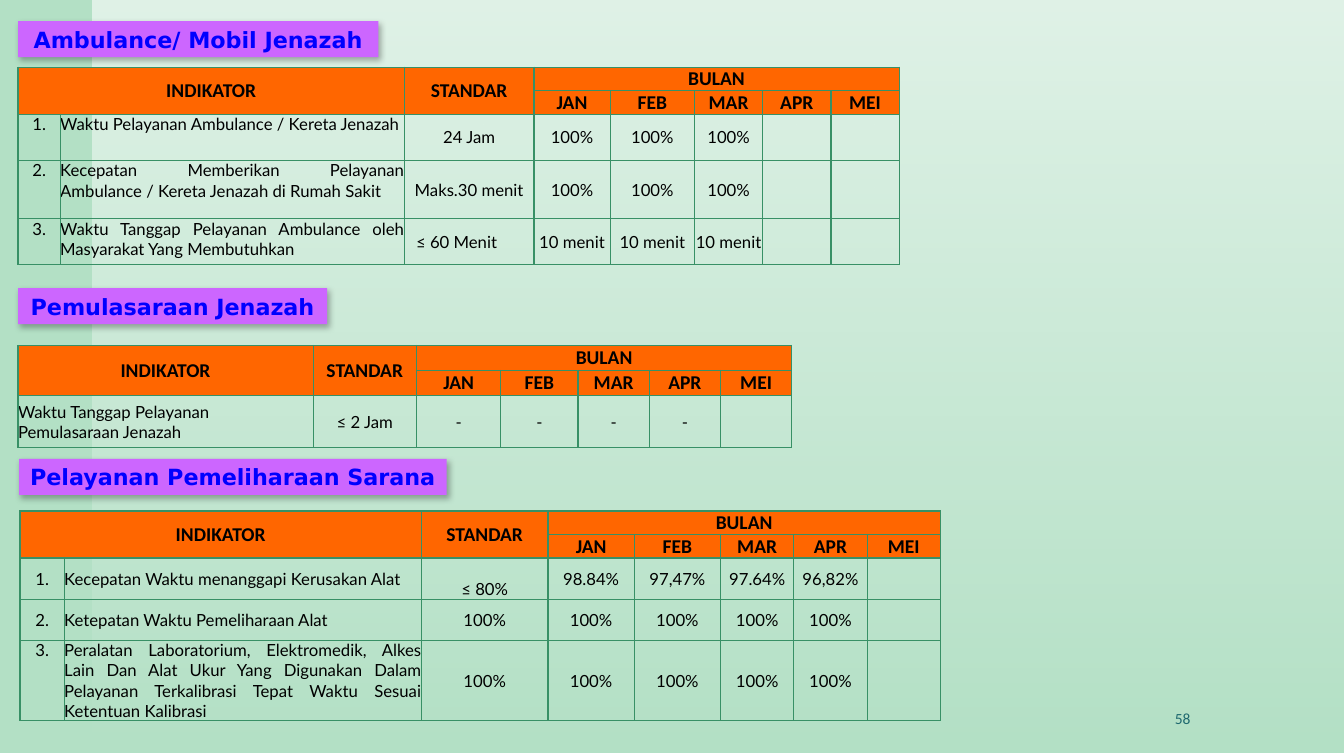
from lxml.etree import SubElement
from pptx import Presentation
from pptx.dml.color import RGBColor
from pptx.enum.shapes import MSO_SHAPE
from pptx.enum.text import MSO_ANCHOR, MSO_AUTO_SIZE, PP_ALIGN
from pptx.oxml import parse_xml
from pptx.oxml.ns import nsdecls, qn
from pptx.util import Inches, Pt

COLORS = {
    "page": "B3E0C5", "veil": "FFFFFF", "heading": "CC66FF", "heading_text": "0000FF",
    "header": "FF6600", "border": "389066", "text": "000000", "number": "1F696F",
}
MONTHS = ["JAN", "FEB", "MAR", "APR", "MEI"]
TOP, MIDDLE, BOTTOM = MSO_ANCHOR.TOP, MSO_ANCHOR.MIDDLE, MSO_ANCHOR.BOTTOM


def rgb(name):
    return RGBColor.from_string(COLORS[name])


def write(tf, text, size=12, font="Lato", color="text", bold=False,
          align=PP_ALIGN.CENTER, anchor=MIDDLE):
    tf.vertical_anchor = anchor
    p = tf.paragraphs[0]
    p.alignment = align
    r = p.add_run()
    r.text = text
    r.font.size, r.font.name, r.font.bold = Pt(size), font, bold
    r.font.color.rgb = rgb(color)


class IndicatorSlide:
    def __init__(self, prs):
        self.slide = prs.slides.add_slide(prs.slide_layouts[5])
        self.shapes = self.slide.shapes
        fill = self.slide.background.fill
        fill.solid()
        fill.fore_color.rgb = rgb("page")

    def veil(self, x, y, w, h):
        """Lay a white panel, fading out downwards, behind everything else."""
        sp = self.shapes.add_shape(MSO_SHAPE.RECTANGLE, *map(Inches, (x, y, w, h)))
        sp.shadow.inherit = False
        sp.line.fill.background()
        sp.fill.gradient()
        sp.fill.gradient_angle = 270
        for stop, position, alpha in zip(sp.fill.gradient_stops, (0, 1), (60000, 0)):
            stop.position = position
            stop.color.rgb = rgb("veil")
            color = stop.color._xFill if hasattr(stop.color, "_xFill") else None
        for color, alpha in zip(sp.element.spPr.iter(qn("a:srgbClr")), (60000, 0)):
            SubElement(color, qn("a:alpha"), val=str(alpha))
        self.shapes._spTree.insert(2, sp.element)

    def heading(self, text, x, y, w, h=0.36, sp=None):
        sp = sp or self.shapes.add_shape(MSO_SHAPE.RECTANGLE, 0, 0, 0, 0)
        sp.left, sp.top, sp.width, sp.height = map(Inches, (x, y, w, h))
        sp.fill.solid()
        sp.fill.fore_color.rgb = rgb("heading")
        sp.line.fill.background()
        sp.element.spPr.append(parse_xml(
            f'<a:effectLst {nsdecls("a")}><a:outerShdw blurRad="{Pt(4.5)}" dist="{Pt(2.6)}" '
            f'dir="{53 * 60000}" algn="tl" rotWithShape="0"><a:srgbClr val="{COLORS["text"]}">'
            '<a:alpha val="30000"/></a:srgbClr></a:outerShdw></a:effectLst>'))
        tf = sp.text_frame
        tf.word_wrap, tf.auto_size = False, MSO_AUTO_SIZE.NONE
        tf.margin_left = tf.margin_right = Inches(0.09)
        tf.margin_top = tf.margin_bottom = Inches(0.04)
        write(tf, text, size=16, font="DejaVu Sans", color="heading_text", bold=True)

    def page_number(self, text, x, y, w, h):
        tf = self.shapes.add_textbox(*map(Inches, (x, y, w, h))).text_frame
        tf.word_wrap = True
        write(tf, text, size=11.1, font="Calibri", color="number", align=PP_ALIGN.RIGHT)

    def style_cell(self, cell, is_header):
        cell.margin_left = cell.margin_right = cell.margin_top = cell.margin_bottom = 0
        if is_header:
            cell.fill.solid()
            cell.fill.fore_color.rgb = rgb("header")
        else:
            cell.fill.background()
        tcPr = cell._tc.get_or_add_tcPr()
        for i, side in enumerate("LRTB"):
            tcPr.insert(i, parse_xml(
                f'<a:ln{side} {nsdecls("a")} w="{Pt(1)}"><a:solidFill>'
                f'<a:srgbClr val="{COLORS["border"]}"/></a:solidFill></a:ln{side}>'))

    def table(self, x, y, widths, heights, rows, label_anchors, label_align=PP_ALIGN.JUSTIFY):
        """Add a table with a two-row header; the last six columns are standard and months."""
        n_rows, n_cols = len(heights), len(widths)
        frame = self.shapes.add_table(n_rows, n_cols, Inches(x), Inches(y),
                                      Inches(sum(widths)), Inches(sum(heights)))
        tbl = frame.table
        tbl.first_row = tbl.horz_banding = False
        for col, width in zip(tbl.columns, widths):
            col.width = Inches(width)
        for i, (row, height) in enumerate(zip(tbl.rows, heights)):
            row.height = Inches(height)
            for cell in row.cells:
                self.style_cell(cell, i < 2)

        standard = n_cols - len(MONTHS) - 1
        label = standard - 1
        tbl.cell(0, 0).merge(tbl.cell(1, label))
        tbl.cell(0, standard).merge(tbl.cell(1, standard))
        tbl.cell(0, standard + 1).merge(tbl.cell(0, n_cols - 1))
        headers = [(0, 0, "INDIKATOR"), (0, standard, "STANDAR"), (0, standard + 1, "BULAN")]
        headers += [(1, standard + 1 + i, month) for i, month in enumerate(MONTHS)]
        for i, j, text in headers:
            self.fill_cell(tbl.cell(i, j), text, size=14, font="Calibri", bold=True)

        for i, (row, anchor) in enumerate(zip(rows, label_anchors), start=2):
            for j, text in enumerate(row):
                self.fill_cell(tbl.cell(i, j), text,
                               anchor=anchor if j <= label else MIDDLE,
                               align=label_align if j == label else PP_ALIGN.CENTER)
        return tbl

    def fill_cell(self, cell, text, anchor=MIDDLE, **style):
        write(cell.text_frame, text, **style)
        cell.vertical_anchor = anchor


def main():
    prs = Presentation()
    prs.slide_width, prs.slide_height = Inches(13.39), Inches(7.5)
    s = IndicatorSlide(prs)
    s.veil(0.92, 0, 12.47, 7.5)
    s.page_number("58", 8.84, 6.95, 3.12, 0.4)

    s.heading("Ambulance/ Mobil Jenazah", 0.18, 0.21, 3.59, sp=s.shapes.title)
    ambulance = s.table(
        0.18, 0.67, [0.42, 3.43, 1.29, 0.76, 0.84] + [0.68] * 3, [0.23, 0.23, 0.46, 0.58, 0.46],
        [["1.", "Waktu Pelayanan Ambulance / Kereta Jenazah", "24 Jam"] + ["100%"] * 3,
         ["2.", "Kecepatan Memberikan Pelayanan Ambulance / Kereta Jenazah di Rumah Sakit",
          "Maks.30 menit"] + ["100%"] * 3,
         ["3.", "Waktu Tanggap Pelayanan Ambulance oleh Masyarakat Yang Membutuhkan",
          "≤ 60 Menit"] + ["10 menit"] * 3],
        [TOP] * 3)
    ambulance.cell(4, 2).margin_right = Inches(0.25)

    s.heading("Pemulasaraan Jenazah", 0.18, 2.87, 3.08)
    s.table(
        0.18, 3.44, [2.94, 1.03, 0.84, 0.77] + [0.71] * 3, [0.25, 0.25, 0.52],
        [["Waktu Tanggap Pelayanan Pemulasaraan Jenazah", "≤ 2 Jam"] + ["-"] * 4],
        [MIDDLE], label_align=PP_ALIGN.LEFT)

    s.heading("Pelayanan Pemeliharaan Sarana", 0.19, 4.57, 4.26)
    upkeep = s.table(
        0.2, 5.09, [0.44, 3.56, 1.26, 0.86, 0.86] + [0.73] * 3, [0.23, 0.23, 0.41, 0.41, 0.8],
        [["1.", "Kecepatan Waktu menanggapi Kerusakan Alat", "≤ 80%",
          "98.84%", "97,47%", "97.64%", "96,82%"],
         ["2.", "Ketepatan Waktu Pemeliharaan Alat"] + ["100%"] * 5,
         ["3.", "Peralatan Laboratorium, Elektromedik, Alkes Lain Dan Alat Ukur Yang Digunakan "
          "Dalam Pelayanan Terkalibrasi Tepat Waktu Sesuai Ketentuan Kalibrasi"] + ["100%"] * 5],
        [MIDDLE, MIDDLE, TOP])
    upkeep.cell(2, 2).vertical_anchor = BOTTOM
    prs.save("out.pptx")


if __name__ == "__main__":
    main()
